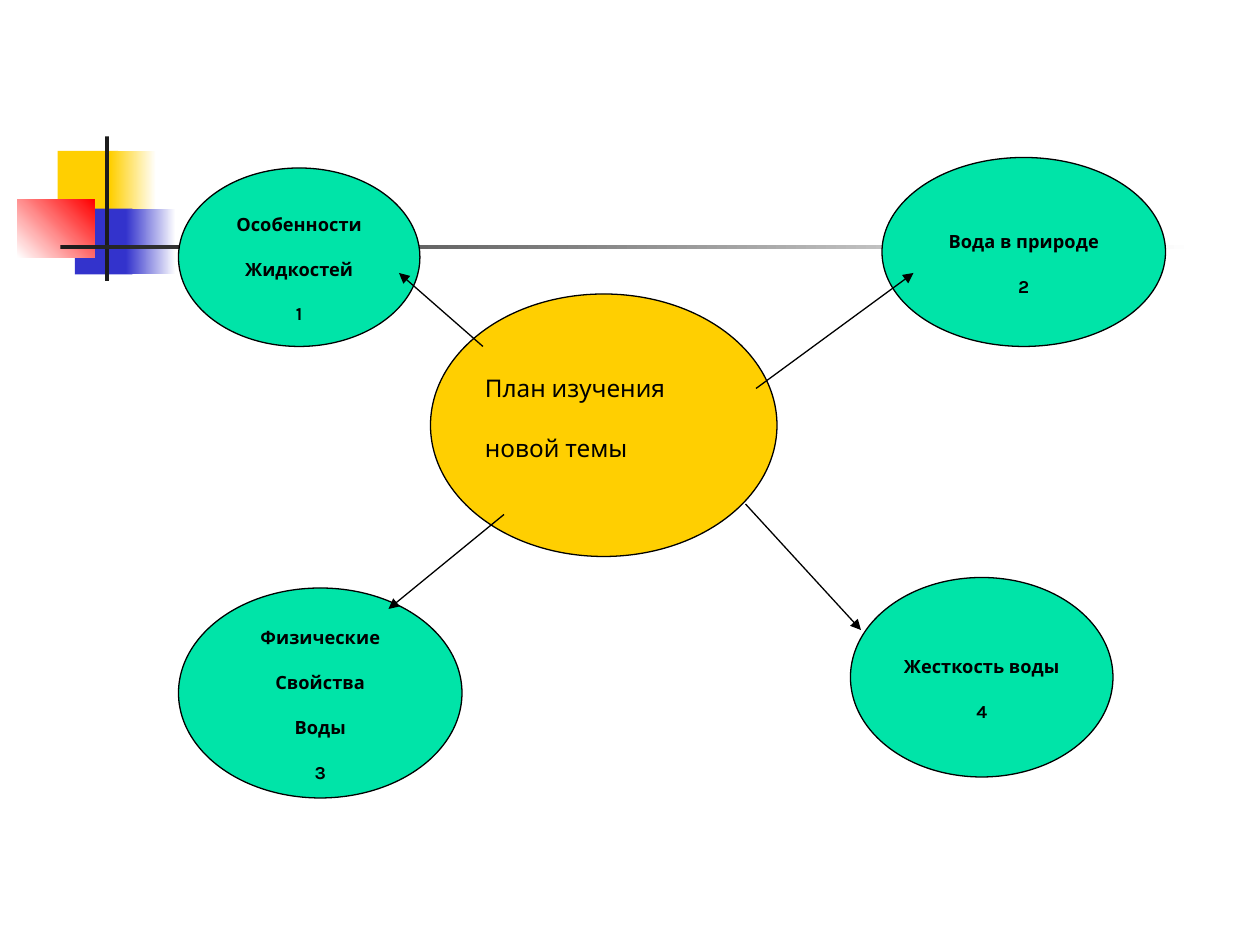
from lxml.etree import SubElement
from pptx import Presentation
from pptx.dml.color import RGBColor
from pptx.enum.shapes import MSO_CONNECTOR as Connector, MSO_SHAPE as Shape
from pptx.enum.text import MSO_ANCHOR as Anchor, MSO_AUTO_SIZE as AutoSize, PP_ALIGN as Align
from pptx.oxml.ns import qn
from pptx.util import Emu, Pt

PX = 9525  # EMU in one px, 96 px to the inch
FONT = "Karla"
SUBSCRIPT = "-31000"  # all wording is set as subscript
COLORS = {
    "yellow": "FFCF01", "blue": "3333CC", "red": "FF0000", "green": "00E4A8",
    "dark": "1C1C1C", "white": "FFFFFF", "black": "000000",
}

# Decoration: box, colours (two make a gradient), gradient angle
DECORATION = [
    ((44, 115, 46, 50), ["yellow"], 0),
    ((84, 115, 35, 50), ["yellow", "white"], 0),
    ((57, 159, 44, 50), ["blue"], 0),
    ((96, 159, 38, 50), ["blue", "white"], 0),
    ((13, 152, 59, 44), ["white", "red"], 45),
    ((80, 104, 3, 110), ["dark"], 0),
    ((46, 187, 864, 3), ["dark", "white"], 0),
]
TOPICS = [
    ((136, 448, 216, 160), ["Физические", "Свойства", "Воды", "3"]),
    ((136, 128, 184, 136), ["Особенности", "Жидкостей", "1"]),
    ((648, 440, 200, 152), ["Жесткость воды", "4"]),
    ((672, 120, 216, 144), ["Вода в природе", "2"]),
]
ARROWS = [
    (576, 296, 696, 208),
    (384, 392, 296, 464),
    (368, 264, 304, 208),
    (568, 384, 656, 480),
]


def px(*lengths):
    return [Emu(length * PX) for length in lengths]


def color(name):
    return RGBColor.from_string(COLORS[name])


def add_block(slide, kind, box, fills, angle=0):
    block = slide.shapes.add_shape(kind, *px(*box))
    block.shadow.inherit = False
    block.line.fill.background()
    if len(fills) == 1:
        block.fill.solid()
        block.fill.fore_color.rgb = color(fills[0])
    else:
        block.fill.gradient()
        block.fill.gradient_angle = angle
        for stop, name in zip(block.fill.gradient_stops, fills):
            stop.color.rgb = color(name)
    return block


def add_oval(slide, box, fill):
    oval = add_block(slide, Shape.OVAL, box, [fill])
    oval.line.color.rgb = color("black")
    oval.line.width = Pt(0.75)
    return oval


def write_lines(frame, lines, size, align, bold=False):
    for index, line in enumerate(lines):
        paragraph = frame.add_paragraph() if index else frame.paragraphs[0]
        paragraph.alignment = align
        run = paragraph.add_run()
        run.text = line
        run.font.name = FONT
        run.font.size = Pt(size)
        run.font.bold = bold
        run.font.color.rgb = color("black")
        run.font._element.set("baseline", SUBSCRIPT)


def add_topic(slide, box, lines):
    frame = add_oval(slide, box, "green").text_frame
    frame.word_wrap = False
    frame.vertical_anchor = Anchor.MIDDLE
    write_lines(frame, lines, 18, Align.CENTER, bold=True)


def add_plan(slide):
    add_oval(slide, (328, 224, 264, 200), "yellow")
    frame = slide.shapes.add_textbox(*px(360, 256, 208, 125)).text_frame
    frame.word_wrap = True
    frame.auto_size = AutoSize.SHAPE_TO_FIT_TEXT
    write_lines(frame, ["План изучения новой темы"], 24, Align.LEFT)


def add_arrow(slide, ends):
    arrow = slide.shapes.add_connector(Connector.STRAIGHT, *px(*ends))
    arrow.line.color.rgb = color("black")
    arrow.line.width = Pt(0.75)
    SubElement(arrow.line._get_or_add_ln(), qn("a:tailEnd"), type="triangle")
    SubElement(arrow._element.spPr, qn("a:effectLst"))


def main():
    deck = Presentation()
    deck.slide_width, deck.slide_height = px(960, 720)
    slide = deck.slides.add_slide(deck.slide_layouts[6])

    # Coloured squares and crossing bars
    for box, fills, angle in DECORATION:
        add_block(slide, Shape.RECTANGLE, box, fills, angle)

    # Plan in the centre, topics around it
    add_plan(slide)
    for box, lines in TOPICS:
        add_topic(slide, box, lines)
    for ends in ARROWS:
        add_arrow(slide, ends)

    deck.save("out.pptx")


if __name__ == "__main__":
    main()
